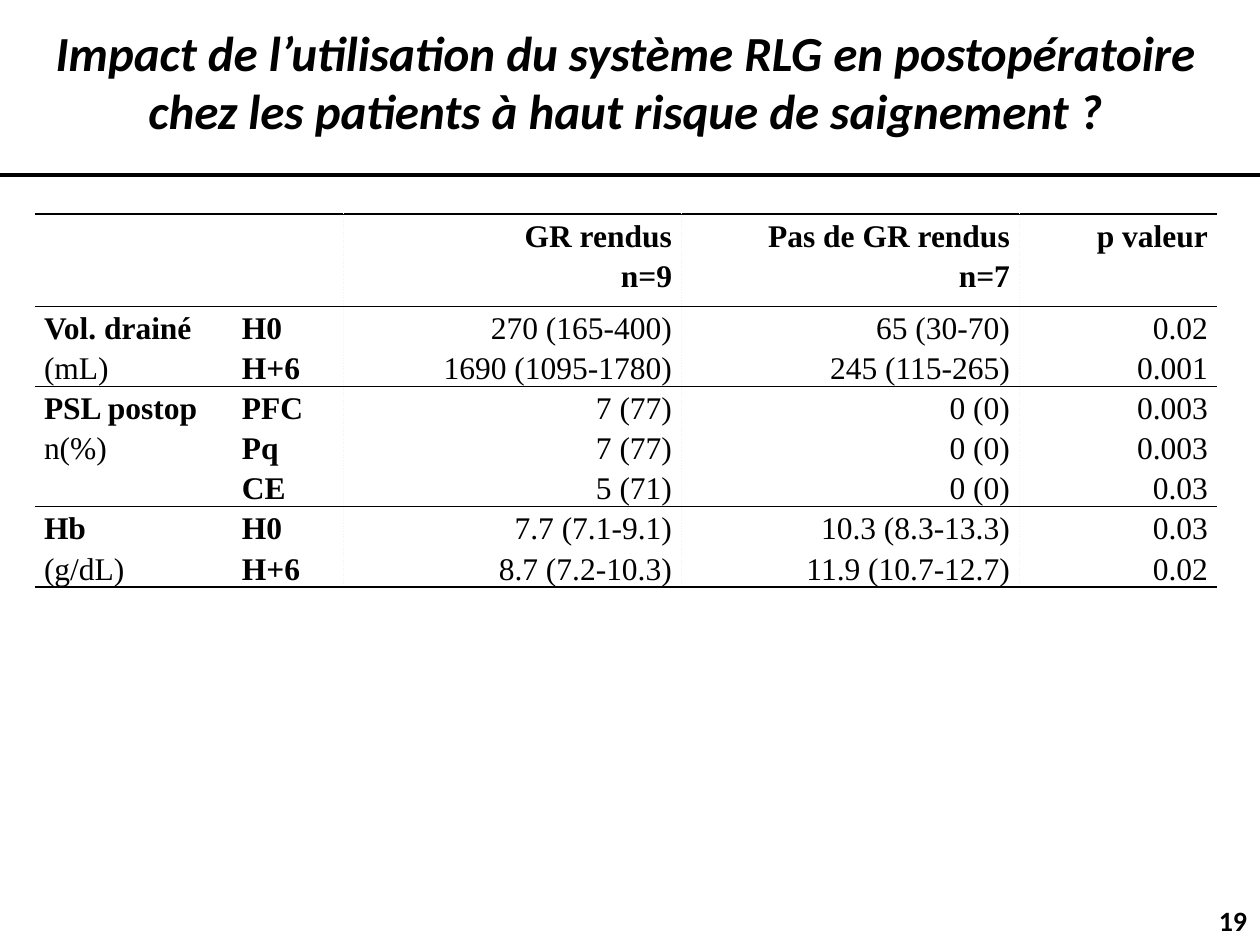
from lxml.etree import SubElement
from pptx import Presentation
from pptx.dml.color import RGBColor
from pptx.enum.shapes import MSO_SHAPE as Shape
from pptx.enum.text import MSO_ANCHOR as Anchor, PP_ALIGN as Align
from pptx.oxml.ns import qn
from pptx.util import Pt

PX = 914400 // 126
COLORS = {"ink": "000000", "paper": "FFFFFF", "grid": "F2F2F2"}

TITLE = ("Impact de l’utilisation du système RLG en postopératoire \v"
         "chez les patients à haut risque de saignement ? ")
HEADER = ["", "", "GR rendus\nn=9", "Pas de GR rendus\nn=7", "p valeur"]
GROUPS = [
    [["Vol. drainé", "H0", "270 (165-400)", "65 (30-70)", "0.02"],
     ["(mL)", "H+6", "1690 (1095-1780)", "245 (115-265)", "0.001"]],
    [["PSL postop", "PFC", "7 (77)", "0 (0)", "0.003"],
     ["n(%)", "Pq", "7 (77)", "0 (0)", "0.003"],
     ["", "CE", "5 (71)", "0 (0)", "0.03"]],
    [["Hb", "H0", "7.7 (7.1-9.1)", "10.3 (8.3-13.3)", "0.03"],
     ["(g/dL)", "H+6", "8.7 (7.2-10.3)", "11.9 (10.7-12.7)", "0.02"]],
]
COLUMN_WIDTHS = [198, 110, 338, 338, 198]
HEADER_HEIGHT, ROW_HEIGHT = 92, 26
LABEL_COLUMNS = 2


def rgb(name):
    return RGBColor.from_string(COLORS[name])


def write(frame, text, size, font="Calibri", bold=True, italic=False,
          align=Align.CENTER, spacing=None):
    """Newlines start paragraphs, vertical tabs break lines within one."""
    for i, line in enumerate(text.split("\n")):
        paragraph = frame.add_paragraph() if i else frame.paragraphs[0]
        paragraph.text = line
        paragraph.alignment = align
        paragraph.line_spacing = spacing
        for run in paragraph.runs:
            run.font.name, run.font.size = font, Pt(size)
            run.font.bold, run.font.italic = bold, italic
            run.font.color.rgb = rgb("ink")


def add_panel(slide, box, text, size, line_width=0, wrap=True, italic=False):
    panel = slide.shapes.add_shape(Shape.RECTANGLE, *(v * PX for v in box))
    panel.shadow.inherit = False
    panel.fill.solid()
    panel.fill.fore_color.rgb = rgb("paper")
    if line_width:
        panel.line.color.rgb = rgb("ink")
        panel.line.width = Pt(line_width)
    else:
        panel.line.fill.background()
    panel.text_frame.word_wrap = wrap
    panel.text_frame.vertical_anchor = Anchor.MIDDLE
    write(panel.text_frame, text, size, italic=italic)


def add_border(cell, side, style):
    """style is (colour, width in points, dash), or None for no line."""
    line = SubElement(cell._tc.get_or_add_tcPr(), qn(f"a:ln{side}"))
    if style is None:
        SubElement(line, qn("a:noFill"))
        return
    color, width, dash = style
    line.set("w", str(Pt(width)))
    fill = SubElement(line, qn("a:solidFill"))
    SubElement(fill, qn("a:srgbClr")).set("val", COLORS[color])
    SubElement(line, qn("a:prstDash")).set("val", dash)


def add_results(slide, box):
    rows = [HEADER] + [row for group in GROUPS for row in group]
    table = slide.shapes.add_table(
        len(rows), len(COLUMN_WIDTHS), *(v * PX for v in box)).table
    table.first_row = table.horz_banding = False
    for column, width in zip(table.columns, COLUMN_WIDTHS):
        column.width = width * PX
    for r, row in enumerate(table.rows):
        row.height = (ROW_HEIGHT if r else HEADER_HEIGHT) * PX

    # Rules: strong at both ends, fine above each group, dotted between columns
    rules = {0: ("ink", 1, "solid"), len(rows): ("ink", 1, "solid")}
    group_start = 1
    for group in GROUPS:
        rules[group_start] = ("ink", 0.25, "solid")
        group_start += len(group)
    dotted = ("grid", 0.25, "sysDot")
    dividers = {c: dotted for c in range(LABEL_COLUMNS, len(COLUMN_WIDTHS))}

    for r, row in enumerate(rows):
        for c, value in enumerate(row):
            cell = table.cell(r, c)
            cell.margin_left = cell.margin_right = 9 * PX
            cell.margin_top = cell.margin_bottom = 0
            add_border(cell, "L", dividers.get(c))
            add_border(cell, "R", dividers.get(c + 1))
            add_border(cell, "T", rules.get(r))
            add_border(cell, "B", rules.get(r + 1))
            cell.fill.background()
            heading = r == 0 or c == 1 or (c == 0 and r in rules)
            write(cell.text_frame, value, 18, font="Times New Roman",
                  bold=heading, spacing=1.15,
                  align=Align.LEFT if c < LABEL_COLUMNS else Align.RIGHT)


def main():
    deck = Presentation()
    deck.slide_width, deck.slide_height = 1260 * PX, 945 * PX
    slide = deck.slides.add_slide(deck.slide_layouts[6])
    # Title band
    add_panel(slide, (-54, -13, 1370, 188), TITLE, 28, line_width=2, italic=True)
    # Results table
    add_results(slide, (35, 214, sum(COLUMN_WIDTHS), 274))
    # Page number
    add_panel(slide, (1206, 895, 54, 50), "19", 16, wrap=False)
    deck.save("out.pptx")


if __name__ == "__main__":
    main()
